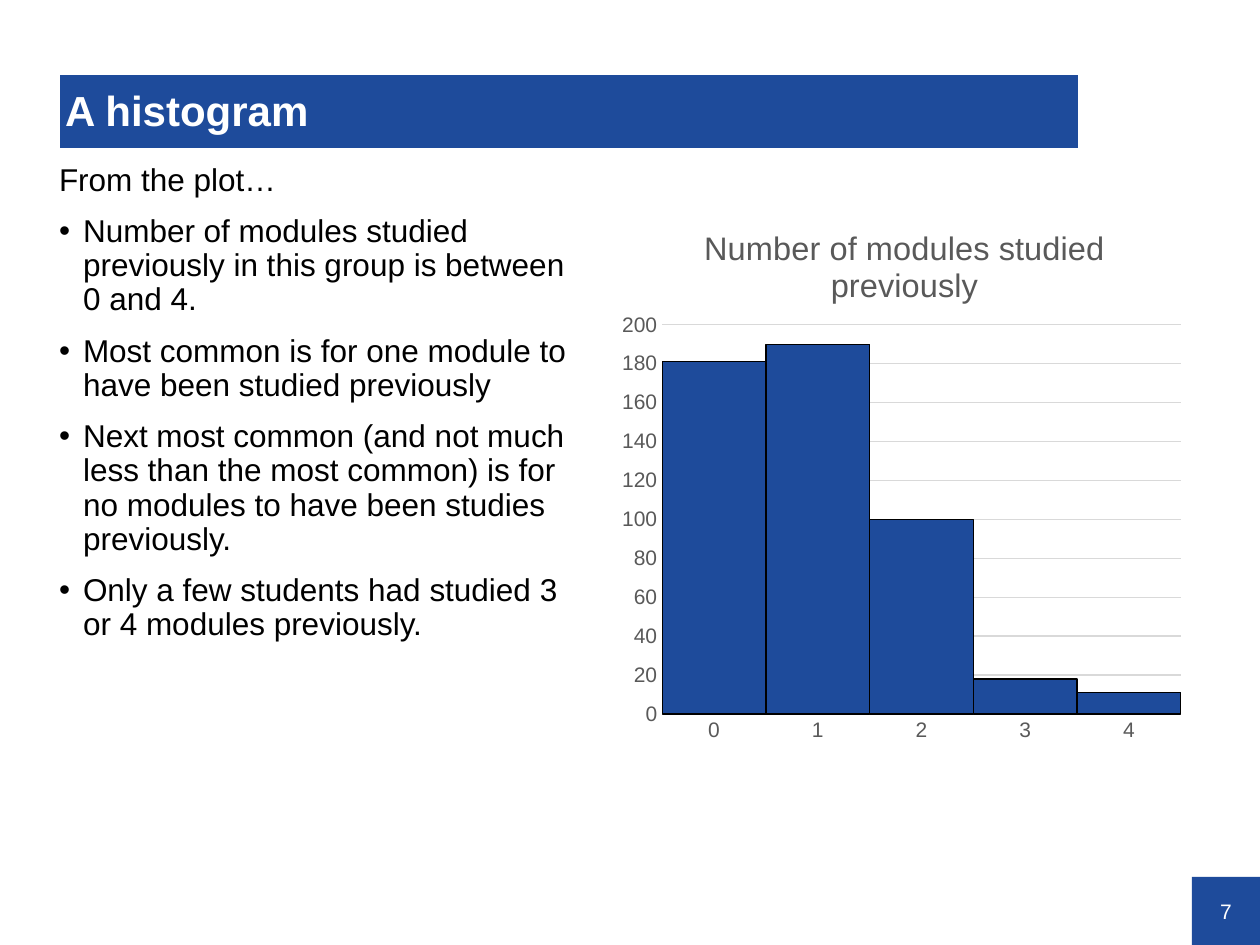
from dataclasses import dataclass

from lxml.etree import SubElement
from pptx import Presentation
from pptx.chart.data import CategoryChartData
from pptx.dml.color import RGBColor
from pptx.enum.chart import XL_CHART_TYPE, XL_TICK_MARK
from pptx.enum.shapes import MSO_SHAPE
from pptx.enum.text import MSO_ANCHOR, MSO_AUTO_SIZE, PP_ALIGN
from pptx.oxml import parse_xml
from pptx.oxml.ns import nsdecls, qn
from pptx.util import Pt

SCALE = 914400 / 126
FONT = "Arial"
COLORS = {"blue": "1E4B9B", "white": "FFFFFF", "black": "000000",
          "gray": "595959", "grid": "D9D9D9"}


@dataclass
class Box:
    left: int
    top: int
    width: int
    height: int

    def emu(self) -> list[int]:
        return [px(n) for n in (self.left, self.top, self.width, self.height)]


@dataclass
class Point:
    text: str
    bullet: bool = True


TITLE = Box(60, 75, 1018, 73)
BODY = Box(54, 159, 532, 718)
CHART = Box(611, 193, 581, 559)
PLOT = Box(662, 325, 519, 389)
BADGE = Box(1192, 877, 68, 68)
POINTS = [
    Point("From the plot…", False),
    Point("Number of modules studied previously in this group is between 0 and 4."),
    Point("Most common is for one module to have been studied previously"),
    Point("Next most common (and not much less than the most common) is for "
          "no modules to have been studies previously."),
    Point("Only a few students had studied 3 or 4 modules previously."),
]
COUNTS = {"0": 181, "1": 190, "2": 100, "3": 18, "4": 11}


def px(n: int) -> int:
    return round(n * SCALE)


def rgb(name: str) -> RGBColor:
    return RGBColor.from_string(COLORS[name])


def style(font, size: float, color: str, bold: bool = False) -> None:
    font.name, font.size, font.bold = FONT, Pt(size), bold
    font.color.rgb = rgb(color)


def place(shape, box: Box) -> None:
    shape.left, shape.top, shape.width, shape.height = box.emu()


def fill(shape, color: str) -> None:
    shape.fill.solid()
    shape.fill.fore_color.rgb = rgb(color)


def inset(frame, left: int, top: int, right: int, bottom: int) -> None:
    frame.margin_left, frame.margin_top = px(left), px(top)
    frame.margin_right, frame.margin_bottom = px(right), px(bottom)
    frame.word_wrap = True
    frame.auto_size = MSO_AUTO_SIZE.NONE


def mark(para, bullet: bool) -> None:
    """Set the hanging indent and the bullet of a paragraph."""
    props = para._p.get_or_add_pPr()
    step = px(24) if bullet else 0
    props.set("marL", str(step))
    props.set("indent", str(-step))
    if bullet:
        SubElement(props, qn("a:buFont")).set("typeface", FONT)
        SubElement(props, qn("a:buChar")).set("char", "•")
    else:
        SubElement(props, qn("a:buNone"))


def add_title(slide) -> None:
    title = slide.shapes.title
    place(title, TITLE)
    fill(title, "blue")
    frame = title.text_frame
    inset(frame, 5, 3, 0, 0)
    frame.vertical_anchor = MSO_ANCHOR.MIDDLE
    frame.text = "A histogram"
    para = frame.paragraphs[0]
    para.alignment, para.line_spacing = PP_ALIGN.LEFT, 0.9
    style(para.runs[0].font, 24, "white", True)


def add_body(slide) -> None:
    body = slide.placeholders[1]
    place(body, BODY)
    frame = body.text_frame
    inset(frame, 5, 5, 5, 5)
    frame.vertical_anchor = MSO_ANCHOR.TOP
    frame.text = "\n".join(point.text for point in POINTS)
    for i, (para, point) in enumerate(zip(frame.paragraphs, POINTS)):
        mark(para, point.bullet)
        para.line_spacing = 0.9
        para.space_before = Pt(10 if i else 0)
        style(para.runs[0].font, 18, "black")


def add_badge(slide) -> None:
    badge = slide.shapes.add_shape(MSO_SHAPE.RECTANGLE, *BADGE.emu())
    badge.shadow.inherit = False
    fill(badge, "blue")
    badge.line.fill.background()
    frame = badge.text_frame
    inset(frame, 0, 0, 0, 0)
    frame.vertical_anchor = MSO_ANCHOR.MIDDLE
    frame.text = "7"
    frame.paragraphs[0].alignment = PP_ALIGN.CENTER
    style(frame.paragraphs[0].runs[0].font, 12, "white")


def layout(sizes: dict[str, float], inner: bool = False):
    """Build a manual chart layout from fractions of the chart."""
    target = '<c:layoutTarget val="inner"/>' if inner else ""
    modes = "".join(f'<c:{k}Mode val="edge"/>' for k in "xy")
    parts = "".join(f'<c:{k} val="{v:.2f}"/>' if not inner else f'<c:{k} val="{v:.3f}"/>'
                    for k, v in sizes.items())
    return parse_xml(f'<c:layout {nsdecls("c")}><c:manualLayout>{target}{modes}'
                     f'{parts}</c:manualLayout></c:layout>')


def set_line(line, color: str) -> None:
    line.color.rgb = rgb(color)
    line.width = Pt(0.75)


def add_chart(slide) -> None:
    data = CategoryChartData()
    data.categories = list(COUNTS)
    data.add_series("Series 1", list(COUNTS.values()))
    chart = slide.shapes.add_chart(XL_CHART_TYPE.COLUMN_CLUSTERED,
                                   *CHART.emu(), data).chart
    style(chart.font, 10, "black")
    chart.has_legend = False

    # Title
    chart.has_title = True
    title = chart.chart_title
    title.text_frame.text = "Number of modules studied previously"
    style(title.text_frame.paragraphs[0].runs[0].font, 18.6, "gray")
    title.include_in_layout = False
    for old in title._element.findall(qn("c:layout")):
        title._element.remove(old)
    title._element.find(qn("c:tx")).addnext(layout({"x": 0.15, "y": 0.05}))

    # Plot area and columns
    area = chart._chartSpace.chart.plotArea
    for old in area.findall(qn("c:layout")):
        area.remove(old)
    area.insert(0, layout({"x": (PLOT.left - CHART.left) / CHART.width,
                           "y": (PLOT.top - CHART.top) / CHART.height,
                           "w": PLOT.width / CHART.width,
                           "h": PLOT.height / CHART.height}, True))
    plot = chart.plots[0]
    plot.gap_width, plot.overlap = 0, -27
    plot.vary_by_categories = False
    bars = plot.series[0].format
    fill(bars, "blue")
    set_line(bars.line, "black")

    # Axes
    for axis in (chart.category_axis, chart.value_axis):
        axis.major_tick_mark = axis.minor_tick_mark = XL_TICK_MARK.NONE
        style(axis.tick_labels.font, 12, "gray")
    set_line(chart.category_axis.format.line, "grid")
    values = chart.value_axis
    values.minimum_scale, values.maximum_scale, values.major_unit = 0, 200, 20
    values.format.line.fill.background()
    set_line(values.major_gridlines.format.line, "grid")


def main() -> None:
    deck = Presentation()
    deck.slide_width, deck.slide_height = px(1260), px(945)
    slide = deck.slides.add_slide(deck.slide_layouts[1])
    add_badge(slide)
    add_body(slide)
    add_title(slide)
    add_chart(slide)
    deck.save("out.pptx")


if __name__ == "__main__":
    main()
